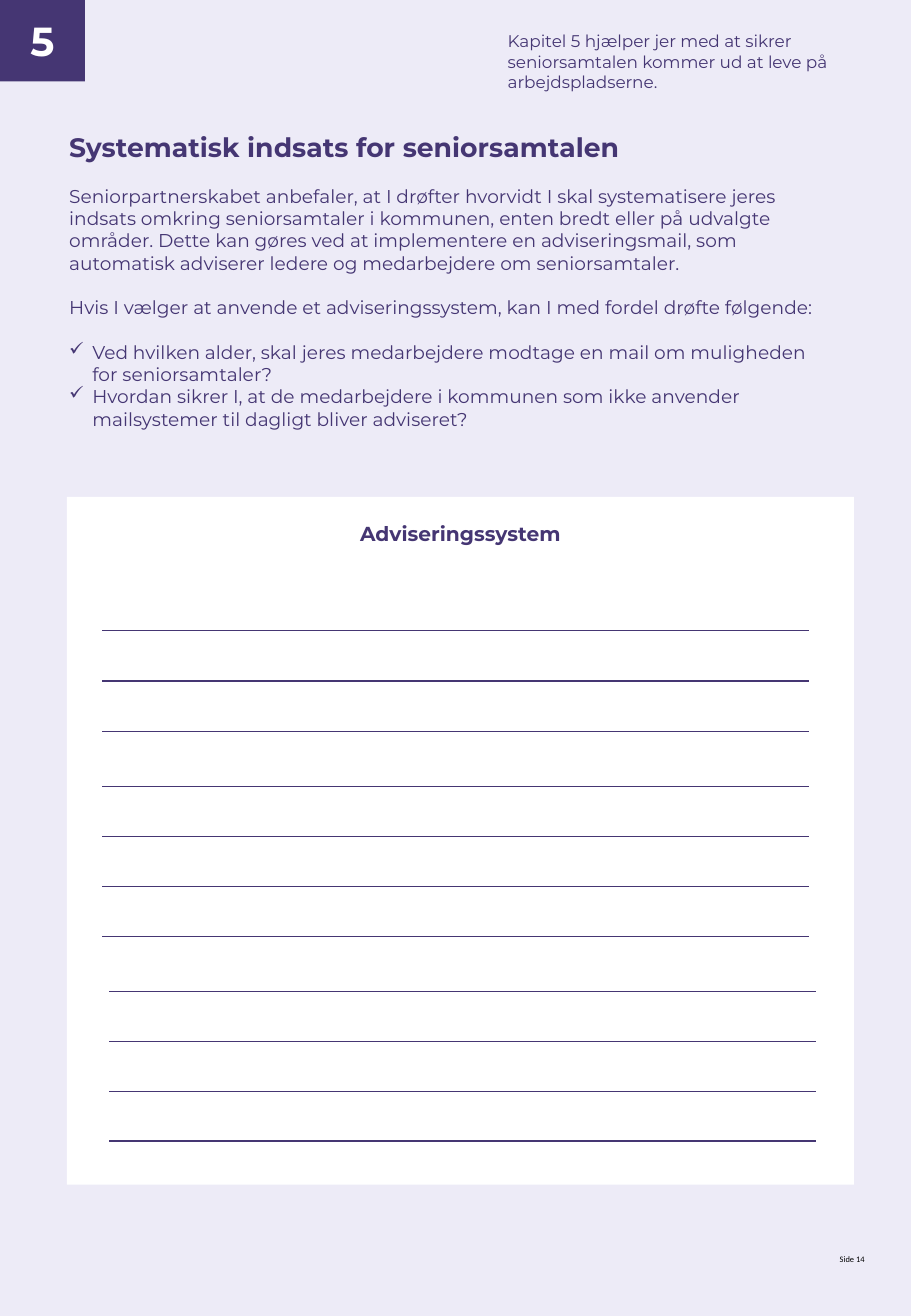
import pptx
import pptx.util
import pptx.dml.color
import pptx.enum.shapes
import pptx.enum.text
import pptx.oxml.ns
import lxml.etree

Inches = pptx.util.Inches
Pt = pptx.util.Pt
ALIGN = pptx.enum.text.PP_ALIGN
ANCHOR = pptx.enum.text.MSO_ANCHOR

# Content
WIDTH, HEIGHT = 7.5, 10.83
COLORS = {"page": "EDEBF7", "ink": "453673", "white": "FFFFFF", "black": "000000"}
CHAPTER = "5"
INTRO = ("Kapitel 5 hjælper jer med at sikrer seniorsamtalen kommer ud at leve på "
         "arbejdspladserne.")
TITLE = "Systematisk indsats for seniorsamtalen"
BODY = [  # text, space before in points, check mark
    ("Seniorpartnerskabet anbefaler, at I drøfter hvorvidt I skal systematisere jeres "
     "indsats omkring seniorsamtaler i kommunen, enten bredt eller på udvalgte områder. "
     "Dette kan gøres ved at implementere en adviseringsmail, som automatisk adviserer "
     "ledere og medarbejdere om seniorsamtaler.", 0, False),
    ("Hvis I vælger at anvende et adviseringssystem, kan I med fordel drøfte følgende:",
     13.2, False),
    ("Ved hvilken alder, skal jeres medarbejdere modtage en mail om muligheden for "
     "seniorsamtaler?", 13.2, True),
    ("Hvordan sikrer I, at de medarbejdere i kommunen som ikke anvender mailsystemer "
     "til dagligt bliver adviseret?", 0, True),
]
PANEL = "Adviseringssystem"
FOOTER = "Side 14"
RULES = [  # left, first top, last top, count
    (0.84, 5.19, 6.02, 3),
    (0.84, 6.47, 7.71, 4),
    (0.9, 8.16, 9.39, 4),
]
RULE_WIDTH = 5.82
INDENT = 0.19

deck = pptx.Presentation()
deck.slide_width, deck.slide_height = Inches(WIDTH), Inches(HEIGHT)
slide = deck.slides.add_slide(deck.slide_layouts[6])


def color(name):
    return pptx.dml.color.RGBColor.from_string(COLORS[name])


def add_box(left, top, width, height, fill):
    box = slide.shapes.add_shape(
        pptx.enum.shapes.MSO_SHAPE.RECTANGLE,
        Inches(left), Inches(top), Inches(width), Inches(height))
    box.shadow.inherit = False
    box.fill.solid()
    box.fill.fore_color.rgb = color(fill)
    box.line.fill.background()
    return box


def add_area(left, top, width, height):
    return slide.shapes.add_textbox(
        Inches(left), Inches(top), Inches(width), Inches(height))


def add_check(para):
    props = para._p.get_or_add_pPr()
    props.set("marL", str(Inches(INDENT)))
    props.set("indent", str(-Inches(INDENT)))
    mark = lxml.etree.SubElement(props, pptx.oxml.ns.qn("a:buChar"))
    mark.set("char", "✓")


def write(shape, text, size=11, font="Montserrat", ink="ink", bold=False,
          align=ALIGN.LEFT, anchor=ANCHOR.TOP, inset=0):
    """Fill a shape with one text, or a list of (text, space before, check)."""
    frame = shape.text_frame
    frame.word_wrap = True
    frame.vertical_anchor = anchor
    frame.margin_left = frame.margin_right = Inches(inset)
    frame.margin_top = frame.margin_bottom = Inches(inset)
    items = [(text, 0, False)] if isinstance(text, str) else text
    for i, (words, gap, check) in enumerate(items):
        para = frame.add_paragraph() if i else frame.paragraphs[0]
        para.alignment = align
        para.space_before = Pt(gap)
        if check:
            add_check(para)
        run = para.add_run()
        run.text = words
        run.font.size = Pt(size)
        run.font.name = font
        run.font.bold = bold
        run.font.color.rgb = color(ink)


def add_rule(left, top):
    rule = slide.shapes.add_connector(
        pptx.enum.shapes.MSO_CONNECTOR.STRAIGHT,
        Inches(left), Inches(top), Inches(left + RULE_WIDTH), Inches(top))
    rule.line.color.rgb = color("ink")
    rule.line.width = Pt(0.75)
    lxml.etree.SubElement(rule._element.spPr, pptx.oxml.ns.qn("a:effectLst"))


# Page and footer
add_box(0, 0, WIDTH, HEIGHT, "page")
write(add_area(6.18, 10.32, 0.94, 0.23), FOOTER, size=5, font="Calibri",
      ink="black", align=ALIGN.RIGHT)

# Title and body
write(add_area(0.57, 1.08, 5.01, 0.35), TITLE, size=15.8, bold=True)
write(add_area(0.57, 1.52, 6.28, 2.04), BODY)

# Chapter number and intro
write(add_area(3.98, 0.17, 3.75, 0.67), INTRO, size=10, anchor=ANCHOR.MIDDLE, inset=0.2)
write(add_box(0, 0, 0.7, 0.67, "ink"), CHAPTER, size=24, ink="white", bold=True,
      align=ALIGN.CENTER, anchor=ANCHOR.MIDDLE, inset=0.2)

# Panel with writing lines
write(add_box(0.55, 4.09, 6.48, 5.66, "white"), PANEL, size=12, bold=True,
      align=ALIGN.CENTER, inset=0.2)
for left, first, last, count in RULES:
    step = (last - first) / (count - 1)
    for row in range(count):
        add_rule(left, first + row * step)

deck.save("out.pptx")
